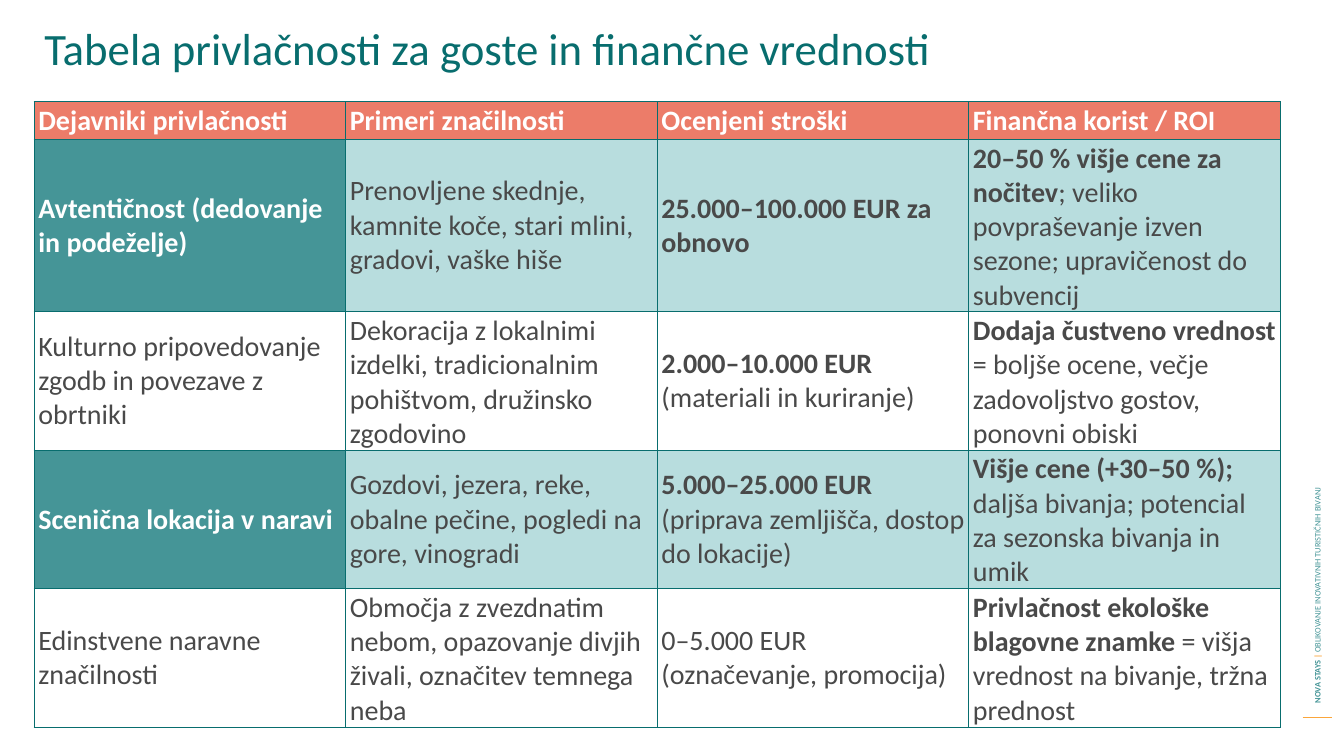
from dataclasses import dataclass

from lxml.etree import SubElement
from pptx import Presentation
from pptx.dml.color import RGBColor
from pptx.enum.shapes import MSO_CONNECTOR
from pptx.enum.text import MSO_ANCHOR, MSO_AUTO_SIZE, PP_ALIGN
from pptx.oxml.ns import qn
from pptx.util import Pt

PX = 9144  # EMU per px, 100 px to the inch
FONT = "Calibri"
DARK_TEAL = RGBColor(0x08, 0x6D, 0x6E)
TEAL = RGBColor(0x45, 0x95, 0x97)
PALE_TEAL = RGBColor(0xB8, 0xDD, 0xDE)
CORAL = RGBColor(0xEC, 0x7C, 0x69)
ORANGE = RGBColor(0xFB, 0xA6, 0x3B)
GREY = RGBColor(0x49, 0x49, 0x49)
WHITE = RGBColor(0xFF, 0xFF, 0xFF)


@dataclass(frozen=True)
class Entry:
    bold: str = ""
    plain: str = ""


@dataclass(frozen=True)
class Factor:
    name: str
    examples: str
    cost: Entry
    benefit: Entry
    height: int
    highlighted: bool = False


HEADINGS = ("Dejavniki privlačnosti", "Primeri značilnosti",
            "Ocenjeni stroški", "Finančna korist / ROI")
HEADING_HEIGHT = 37
COLUMN_WIDTH = 309
FACTORS = (
    Factor("Avtentičnost (dedovanje in podeželje)",
           "Prenovljene skednje, kamnite koče, stari mlini, gradovi, vaške hiše",
           Entry("25.000–100.000 EUR za obnovo"),
           Entry("20–50 % višje cene za nočitev",
                 "; veliko povpraševanje izven sezone; upravičenost do subvencij"),
           171, highlighted=True),
    Factor("Kulturno pripovedovanje zgodb in povezave z obrtniki",
           "Dekoracija z lokalnimi izdelki, tradicionalnim pohištvom, družinsko zgodovino",
           Entry("2.000–10.000 EUR ", "(materiali in kuriranje)"),
           Entry("Dodaja čustveno vrednost ",
                 "= boljše ocene, večje zadovoljstvo gostov, ponovni obiski"),
           137),
    Factor("Scenična lokacija v naravi",
           "Gozdovi, jezera, reke, obalne pečine, pogledi na gore, vinogradi",
           Entry("5.000–25.000 EUR ", "(priprava zemljišča, dostop do lokacije)"),
           Entry("Višje cene (+30–50 %); ",
                 "daljša bivanja; potencial za sezonska bivanja in umik"),
           137, highlighted=True),
    Factor("Edinstvene naravne značilnosti",
           "Območja z zvezdnatim nebom, opazovanje divjih živali, označitev temnega neba",
           Entry(plain="0–5.000 EUR (označevanje, promocija)"),
           Entry("Privlačnost ekološke blagovne znamke ",
                 "= višja vrednost na bivanje, tržna prednost"),
           137),
)


def px(length: int) -> int:
    return length * PX


def write(frame, text: str, *, size: int, color: RGBColor, bold: bool = False) -> None:
    """Append one run to the first paragraph of a text frame."""
    run = frame.paragraphs[0].add_run()
    run.text = text
    run.font.name = FONT
    run.font.size = Pt(size)
    run.font.bold = bold
    run.font.color.rgb = color


def add_borders(cell) -> None:
    properties = cell._tc.get_or_add_tcPr()
    for position, side in enumerate(("a:lnL", "a:lnR", "a:lnT", "a:lnB")):
        border = SubElement(properties, qn(side), w=str(Pt(1)))
        properties.insert(position, border)
        fill = SubElement(border, qn("a:solidFill"))
        SubElement(fill, qn("a:srgbClr"), val=str(DARK_TEAL))


def fill_cell(cell, entry: Entry, color: RGBColor, background: RGBColor | None) -> None:
    cell.vertical_anchor = MSO_ANCHOR.MIDDLE
    cell.margin_left = cell.margin_right = px(4)
    cell.margin_top = cell.margin_bottom = px(2)
    if background is None:
        cell.fill.background()
    else:
        cell.fill.solid()
        cell.fill.fore_color.rgb = background
    add_borders(cell)
    for text, bold in ((entry.bold, True), (entry.plain, False)):
        if text:
            write(cell.text_frame, text, size=20, color=color, bold=bold)


def add_footer(slide) -> None:
    rule = slide.shapes.add_connector(
        MSO_CONNECTOR.STRAIGHT, px(1292), px(712), px(1321), px(712))
    rule.line.color.rgb = ORANGE
    rule.line.width = Pt(0.75)
    SubElement(rule._element.spPr, qn("a:effectLst"))

    project = slide.shapes.add_textbox(px(1018), px(409), px(577), px(20))
    project.rotation = 270
    frame = project.text_frame
    frame.word_wrap = True
    frame.vertical_anchor = MSO_ANCHOR.MIDDLE
    write(frame, "NOVA STAYS ", size=6, color=TEAL, bold=True)
    write(frame, "| ", size=6, color=ORANGE, bold=True)
    write(frame, "OBLIKOVANJE INOVATIVNIH TURISTIČNIH BIVANJ", size=6, color=TEAL)


def add_title(slide) -> None:
    title = slide.shapes.title
    title.left, title.top, title.width, title.height = map(px, (34, 16, 1140, 64))
    frame = title.text_frame
    frame.word_wrap = True
    frame.auto_size = MSO_AUTO_SIZE.NONE
    frame.vertical_anchor = MSO_ANCHOR.TOP
    frame.paragraphs[0].alignment = PP_ALIGN.LEFT
    write(frame, "Tabela privlačnosti za goste in finančne vrednosti",
          size=32, color=DARK_TEAL)


def add_factor_table(slide) -> None:
    heights = [HEADING_HEIGHT, *(factor.height for factor in FACTORS)]
    table = slide.shapes.add_table(
        len(heights), len(HEADINGS), px(34), px(101),
        px(COLUMN_WIDTH * len(HEADINGS)), px(sum(heights))).table
    table.horz_banding = False
    for column in table.columns:
        column.width = px(COLUMN_WIDTH)
    for row, height in zip(table.rows, heights):
        row.height = px(height)

    # Heading row
    for column, heading in enumerate(HEADINGS):
        fill_cell(table.cell(0, column), Entry(heading), WHITE, CORAL)

    # One row per attraction factor
    for row, factor in enumerate(FACTORS, start=1):
        if factor.highlighted:
            fill_cell(table.cell(row, 0), Entry(factor.name), WHITE, TEAL)
        else:
            fill_cell(table.cell(row, 0), Entry(plain=factor.name), GREY, None)
        details = (Entry(plain=factor.examples), factor.cost, factor.benefit)
        background = PALE_TEAL if factor.highlighted else None
        for column, entry in enumerate(details, start=1):
            fill_cell(table.cell(row, column), entry, GREY, background)


def main() -> None:
    presentation = Presentation()
    presentation.slide_width, presentation.slide_height = px(1333), px(750)
    slide = presentation.slides.add_slide(presentation.slide_layouts[5])
    add_footer(slide)
    add_title(slide)
    add_factor_table(slide)
    presentation.save("out.pptx")


if __name__ == "__main__":
    main()
